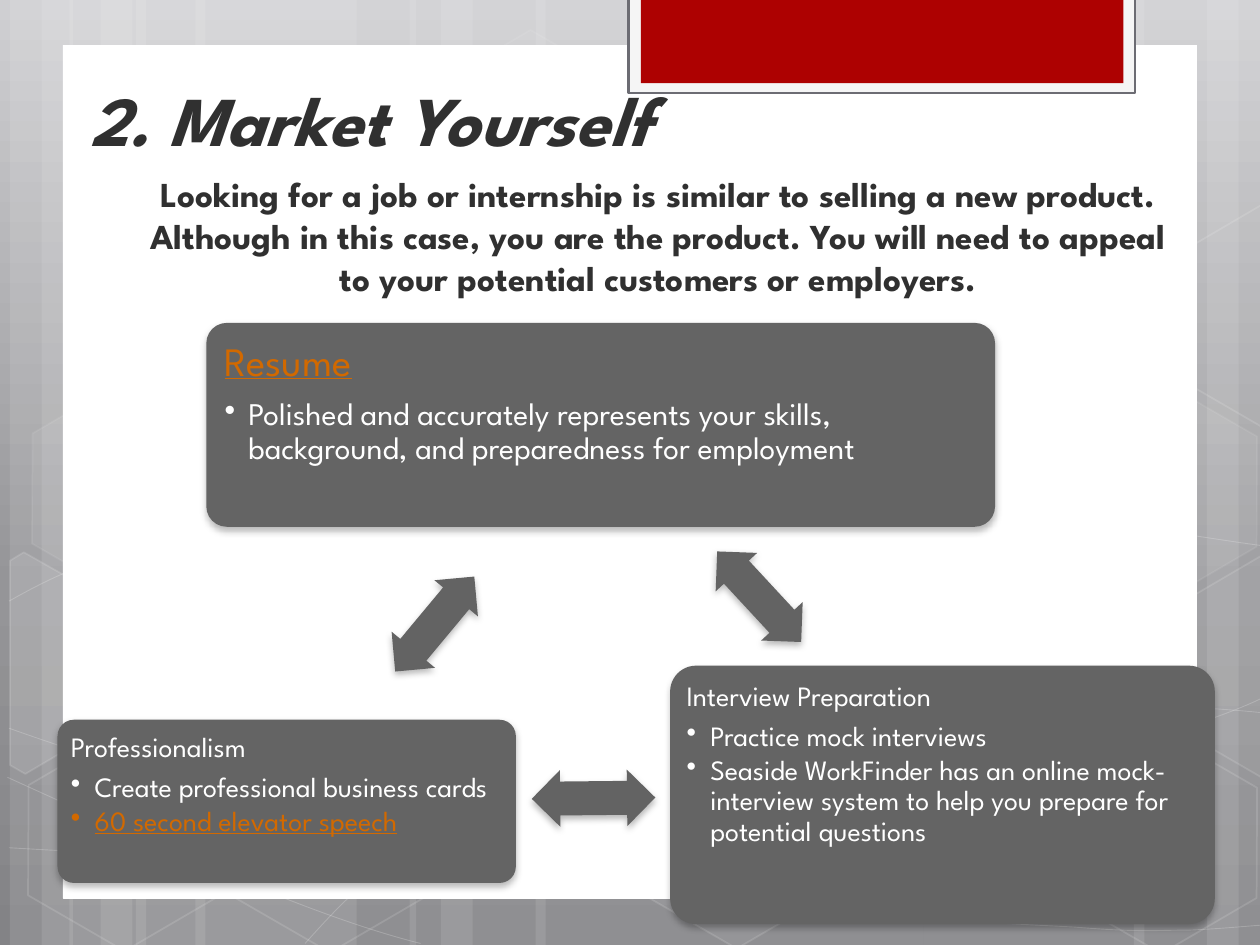
from copy import deepcopy
from dataclasses import dataclass
from math import cos, radians, sin

from lxml.etree import SubElement
from pptx import Presentation
from pptx.dml.color import RGBColor
from pptx.enum.dml import MSO_THEME_COLOR
from pptx.enum.shapes import MSO_SHAPE
from pptx.enum.text import MSO_ANCHOR, PP_ALIGN
from pptx.oxml.ns import qn
from pptx.util import Cm, Pt

FONT = "League Spartan"
WHITE = RGBColor(0xFF, 0xFF, 0xFF)
PALE = RGBColor(0xF5, 0xF5, 0xF5)
FRAME_GRAY = RGBColor(0x6C, 0x6C, 0x73)
RED = RGBColor(0xAD, 0x01, 0x01)
CARD_GRAY = RGBColor(0x64, 0x64, 0x64)
ARROW_GRAY = RGBColor(0x63, 0x63, 0x63)
INK = RGBColor(0x30, 0x30, 0x30)
ORANGE = RGBColor(0xD2, 0x69, 0x00)
BACKGROUND_STOPS = [
    (0, RGBColor(0xCF, 0xCF, 0xD2)),
    (0.62, RGBColor(0x95, 0x95, 0x98)),
    (1, RGBColor(0x83, 0x83, 0x86)),
]
SLIDE_WIDTH, SLIDE_HEIGHT = 25.4, 19.05  # all plain lengths are centimetres
HEXAGON_TILT = 30


@dataclass
class Hexagon:
    left: float
    top: float
    fill_alpha: int
    line_alpha: int


@dataclass
class CutHexagon:
    center: tuple[float, float]
    points: list[tuple[float, float]]
    fill_alpha: int


@dataclass
class Line:
    text: str
    size: int
    bullet: bool = False
    link: bool = False


@dataclass
class Card:
    left: float
    top: float
    width: float
    height: float
    padding: float
    inset: float
    lines: list[Line]


@dataclass
class Arrow:
    left: float
    top: float
    rotation: float


BANDS = [(2.74, 4.45), (0.2, 1.27), (0.84, 2.11), (3.94, 4.45), (1.4, 1.27), (2.03, 2.11),
         (18.62, 4.45), (24.33, 1.27), (22.86, 2.11), (10.8, 7.82), (8.26, 1.27), (8.89, 2.11)]

# Each curve: start point, then cubic segments (two controls and an end)
CURVES = [
    [(0.18, 17.09), (1.55, 17.17, 2.92, 17.25, 4.83, 17.22), (6.73, 17.2, 9.09, 17.15, 11.63, 16.89),
     (14.17, 16.64, 17.78, 16.15, 20.12, 15.67), (22.43, 15.19, 24.82, 14.43, 25.58, 14)],
    [(0.18, 12.12), (0.91, 11.71, 1.65, 11.33, 3.07, 10.95), (4.52, 10.57, 6.58, 10.01, 8.81, 9.83),
     (11.07, 9.65, 13.82, 9.63, 16.61, 9.83), (19.41, 10.03, 24.05, 10.82, 25.58, 11.02)],
    [(0.15, 15.67), (3.23, 17.07, 6.27, 18.47, 8.48, 19.02)],
    [(0.18, 14.68), (0.97, 14.96, 1.78, 15.24, 3.25, 15.65), (4.72, 16.03, 6.93, 16.66, 9.07, 17.09),
     (11.18, 17.53, 13.84, 17.98, 15.95, 18.24), (18.06, 18.52, 20.32, 18.62, 21.67, 18.69),
     (22.99, 18.8, 23.34, 18.75, 24, 18.75), (24.66, 18.72, 25.12, 18.67, 25.58, 18.64)],
    [(6.15, 19.02), (6.6, 18.52, 7.06, 18.01, 7.67, 17.55), (8.28, 17.09, 9.14, 16.59, 9.86, 16.23),
     (10.57, 15.88, 11, 15.72, 11.94, 15.47), (12.85, 15.21, 14.55, 14.86, 15.44, 14.68),
     (16.36, 14.5, 16.48, 14.5, 17.27, 14.45), (18.08, 14.38, 19.3, 14.3, 22.5, 14.27),
     (23.07, 14.27, 23.64, 14.27, 24.21, 14.27), (24.66, 14.3, 25.1, 14.33, 25.55, 14.38)],
]
HEXAGONS = [
    Hexagon(8.48, 0.91, 4, 8), Hexagon(12.62, 14.96, 6, 12), Hexagon(0.28, 15.01, 0, 12),
    Hexagon(0.36, 7.92, 7, 8), Hexagon(4.42, 15.04, 0, 12), Hexagon(19.13, 11.51, 10, 12),
    Hexagon(21.18, 15.06, 0, 12), Hexagon(21.18, 7.98, 7, 8),
]
LEFT_EDGE = [(0.2, 11.3), (0.48, 11.13), (2.44, 12.24), (2.41, 14.48), (0.51, 15.6), (0.2, 15.42)]
RIGHT_EDGE = [(23.52, 12.32), (25.43, 11.2), (25.63, 11.33), (25.63, 15.57), (25.45, 15.67), (23.52, 14.55)]
CUT_HEXAGONS = [
    CutHexagon((0.91, 13.59), LEFT_EDGE, 10),
    CutHexagon((25.02, 13.21), RIGHT_EDGE, 4),
    CutHexagon((25.02, 6.14), [(x, y - 7.07) for x, y in RIGHT_EDGE], 0),
]

CARDS = [
    Card(4.16, 6.51, 15.9, 4.11, 0.12, 0.25, [
        Line("Resume", 23, link=True),
        Line("Polished and accurately represents your skills, background, "
             "and preparedness for employment", 18, bullet=True)]),
    Card(13.51, 13.42, 10.98, 5.21, 0.15, 0.18, [
        Line("Interview Preparation", 16),
        Line("Practice mock interviews", 16, bullet=True),
        Line("Seaside WorkFinder has an online mock-interview system "
             "to help you prepare for potential questions", 16, bullet=True)]),
    Card(1.16, 14.51, 9.24, 3.29, 0.1, 0.17, [
        Line("Professionalism", 16),
        Line("Create professional business cards", 16, bullet=True),
        Line("60 second elevator speech", 16, bullet=True, link=True)]),
]
ARROWS = [Arrow(14.06, 11.46, 47.2), Arrow(10.72, 15.52, 179.4), Arrow(7.52, 12.01, 309.8)]


def set_alpha(fill, element, percent: int) -> None:
    """Paint a white fill and make it translucent."""
    fill.solid()
    fill.fore_color.rgb = WHITE
    SubElement(element.find(".//" + qn("a:srgbClr")), qn("a:alpha"), val=str(percent * 1000))


def style_glass(shape, fill_alpha: int, line_alpha: int = 0, line_width: float = 1) -> None:
    shape.shadow.inherit = False
    shape.fill.background()
    shape.line.fill.background()
    if line_alpha:
        shape.line.width = Pt(line_width)
        set_alpha(shape.line.fill, shape.element.spPr.find(qn("a:ln")), line_alpha)
    if fill_alpha:
        set_alpha(shape.fill, shape.element.spPr, fill_alpha)


def add_block(slide, kind, left: float, top: float, width: float, height: float, color=WHITE,
              line_color=None, line_width: float = 1, shadow: bool = False):
    shape = slide.shapes.add_shape(kind, Cm(left), Cm(top), Cm(width), Cm(height))
    shape.shadow.inherit = False
    shape.fill.solid()
    shape.fill.fore_color.rgb = color
    if line_color is None:
        shape.line.fill.background()
    else:
        shape.line.color.rgb = line_color
        shape.line.width = Pt(line_width)
    if shadow:
        outer = SubElement(shape.element.spPr.find(qn("a:effectLst")), qn("a:outerShdw"), blurRad=str(Pt(4)),
                           dist=str(Pt(2)), dir="5400000", algn="ctr", rotWithShape="0")
        black = SubElement(outer, qn("a:srgbClr"), val="000000")
        SubElement(black, qn("a:alpha"), val="28000")
    return shape


def add_outline(slide, points: list, close: bool):
    start, *rest = [(Cm(x), Cm(y)) for x, y in points]
    builder = slide.shapes.build_freeform(*start)
    builder.add_line_segments(rest, close=close)
    return builder.convert_to_shape()


def add_curve(slide, curve: list):
    """Lay out all control points, then join each three into one cubic segment."""
    points = [curve[0]] + [segment[i:i + 2] for segment in curve[1:] for i in (0, 2, 4)]
    shape = add_outline(slide, points, close=False)
    outline = shape.element.find(".//" + qn("a:path"))
    straight = outline.findall(qn("a:lnTo"))
    for index in range(0, len(straight), 3):
        cubic = SubElement(outline, qn("a:cubicBezTo"))
        for line in straight[index:index + 3]:
            cubic.append(line[0])
            outline.remove(line)
    return shape


def add_cut_hexagon(slide, hexagon: CutHexagon):
    cosine, sine = cos(radians(HEXAGON_TILT)), sin(radians(HEXAGON_TILT))
    center_x, center_y = hexagon.center
    offsets = [(x - center_x, y - center_y) for x, y in hexagon.points]
    upright = [(center_x + x * cosine + y * sine, center_y - x * sine + y * cosine) for x, y in offsets]
    shape = add_outline(slide, upright, close=True)
    shape.rotation = HEXAGON_TILT
    return shape


def add_text_box(slide, left: float, top: float, width: float, height: float, anchor=MSO_ANCHOR.TOP, inset=None):
    frame = slide.shapes.add_textbox(Cm(left), Cm(top), Cm(width), Cm(height)).text_frame
    frame.word_wrap = True
    frame.vertical_anchor = anchor
    if inset is not None:
        frame.margin_left = frame.margin_top = frame.margin_right = frame.margin_bottom = Cm(inset)
    return frame


def write_text(paragraph, text: str, *, size: int, color=WHITE, bold=False, italic=False, underline=False,
               align=PP_ALIGN.LEFT) -> None:
    paragraph.alignment = align
    run = paragraph.add_run()
    run.text = text
    font = run.font
    font.name, font.size, font.color.rgb = FONT, Pt(size), color
    font.bold, font.italic, font.underline = bold, italic, underline


def add_card(slide, card: Card) -> None:
    shape = add_block(slide, MSO_SHAPE.ROUNDED_RECTANGLE, card.left, card.top, card.width, card.height,
                      CARD_GRAY, shadow=True)
    shape.adjustments[0] = 0.1
    pad = card.padding
    frame = add_text_box(slide, card.left + pad, card.top + pad, card.width - 2 * pad, card.height - 2 * pad,
                         inset=card.inset)
    for index, line in enumerate(card.lines):
        paragraph = frame.add_paragraph() if index else frame.paragraphs[0]
        paragraph.line_spacing = 0.9
        paragraph.space_after = Pt(round(line.size * (0.15 if line.bullet else 0.35), 1))
        if line.bullet:
            paragraph.level = 1
            properties = paragraph._p.get_or_add_pPr()
            properties.set("marL", str(Cm(0.48)))
            properties.set("indent", str(-Cm(0.48)))
            SubElement(properties, qn("a:buChar"), char="••")
        write_text(paragraph, line.text, size=line.size, color=ORANGE if line.link else WHITE, underline=line.link)


def add_background(slide) -> None:
    fill = slide.background.fill
    fill.gradient()
    fill.gradient_angle = 270
    stop_list = slide.element.find(".//" + qn("a:gsLst"))
    stop_list.append(deepcopy(stop_list[-1]))
    for stop, (position, color) in zip(fill.gradient_stops, BACKGROUND_STOPS):
        stop.position = position
        stop.color.theme_color = MSO_THEME_COLOR.ACCENT_1
        stop.color.rgb = color


def main() -> None:
    presentation = Presentation()
    presentation.slide_width, presentation.slide_height = Cm(SLIDE_WIDTH), Cm(SLIDE_HEIGHT)
    slide = presentation.slides.add_slide(presentation.slide_layouts[6])

    # Backdrop: gradient, bands, curves and hexagons
    add_background(slide)
    for left, width in BANDS:
        style_glass(add_block(slide, MSO_SHAPE.RECTANGLE, left, 0, width, SLIDE_HEIGHT), 10)
    for curve in CURVES:
        style_glass(add_curve(slide, curve), 0, 20, 0.5)
    for hexagon in HEXAGONS:
        shape = add_block(slide, MSO_SHAPE.HEXAGON, hexagon.left, hexagon.top, 4.45, 3.86)
        shape.adjustments[0], shape.adjustments[1] = 0.285, 1.155
        shape.rotation = HEXAGON_TILT
        style_glass(shape, hexagon.fill_alpha, hexagon.line_alpha)
    for cut_hexagon in CUT_HEXAGONS:
        style_glass(add_cut_hexagon(slide, cut_hexagon), cut_hexagon.fill_alpha, 12)

    # White page and red tab
    add_block(slide, MSO_SHAPE.RECTANGLE, 1.27, 0.91, 22.86, 17.2, WHITE, WHITE, 0.5)
    add_block(slide, MSO_SHAPE.RECTANGLE, 12.67, -0.05, 10.21, 1.93, PALE, FRAME_GRAY, 1.25)
    add_block(slide, MSO_SHAPE.RECTANGLE, 12.92, -0.05, 9.73, 1.73, RED)

    # Cycle of cards and arrows
    for card in CARDS:
        add_card(slide, card)
    for arrow in ARROWS:
        shape = add_block(slide, MSO_SHAPE.LEFT_RIGHT_ARROW, arrow.left, arrow.top, 2.49, 1.14,
                          ARROW_GRAY, shadow=True)
        shape.adjustments[0], shape.adjustments[1] = 0.6, 0.5
        shape.rotation = arrow.rotation

    # Title and introduction
    title = add_text_box(slide, 1.55, 0.18, 19.51, 3.18, MSO_ANCHOR.BOTTOM)
    write_text(title.paragraphs[0], "2. Market Yourself", size=40, color=INK, bold=True, italic=True)
    introduction = add_text_box(slide, 2.41, 3.35, 21.72, 2.82)
    write_text(introduction.paragraphs[0],
               "Looking for a job or internship is similar to selling a new product. Although in this case, "
               "you are the product. You will need to appeal to your potential customers or employers.",
               size=20, color=INK, bold=True, align=PP_ALIGN.CENTER)

    presentation.save("out.pptx")


if __name__ == "__main__":
    main()
